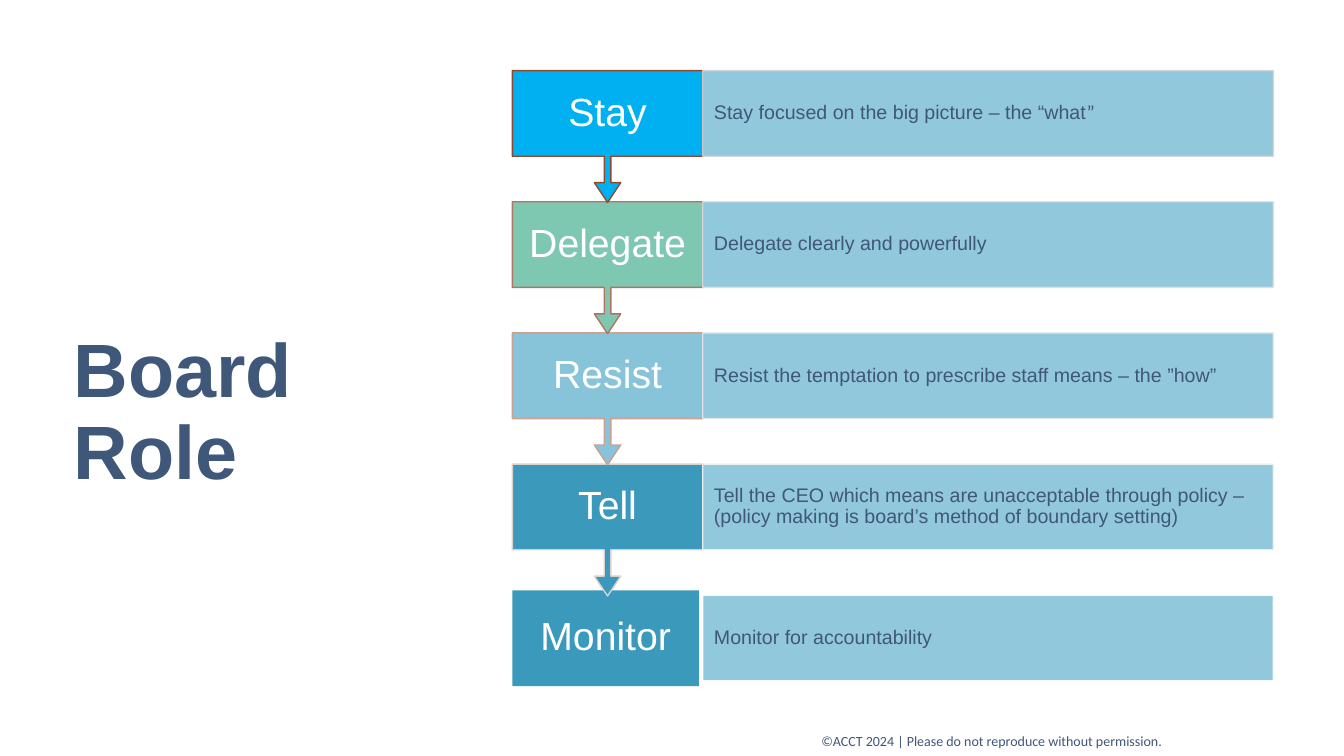
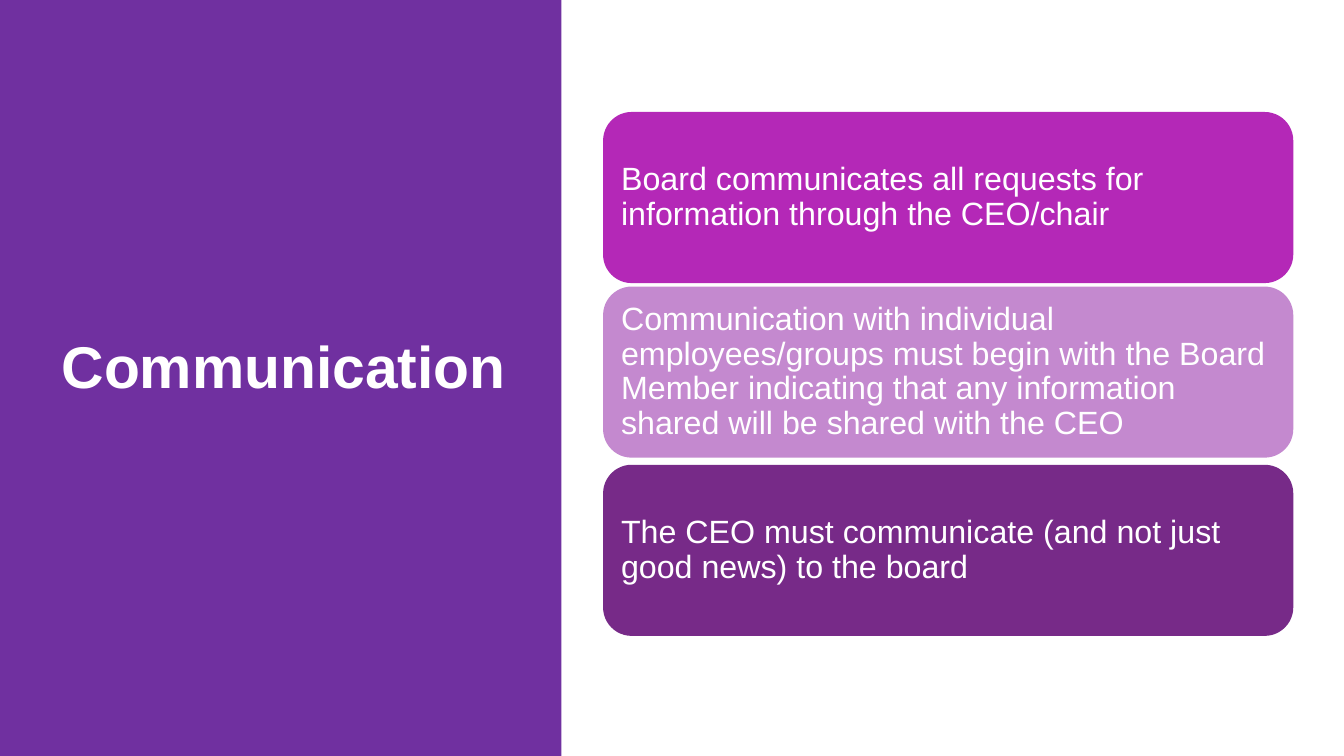
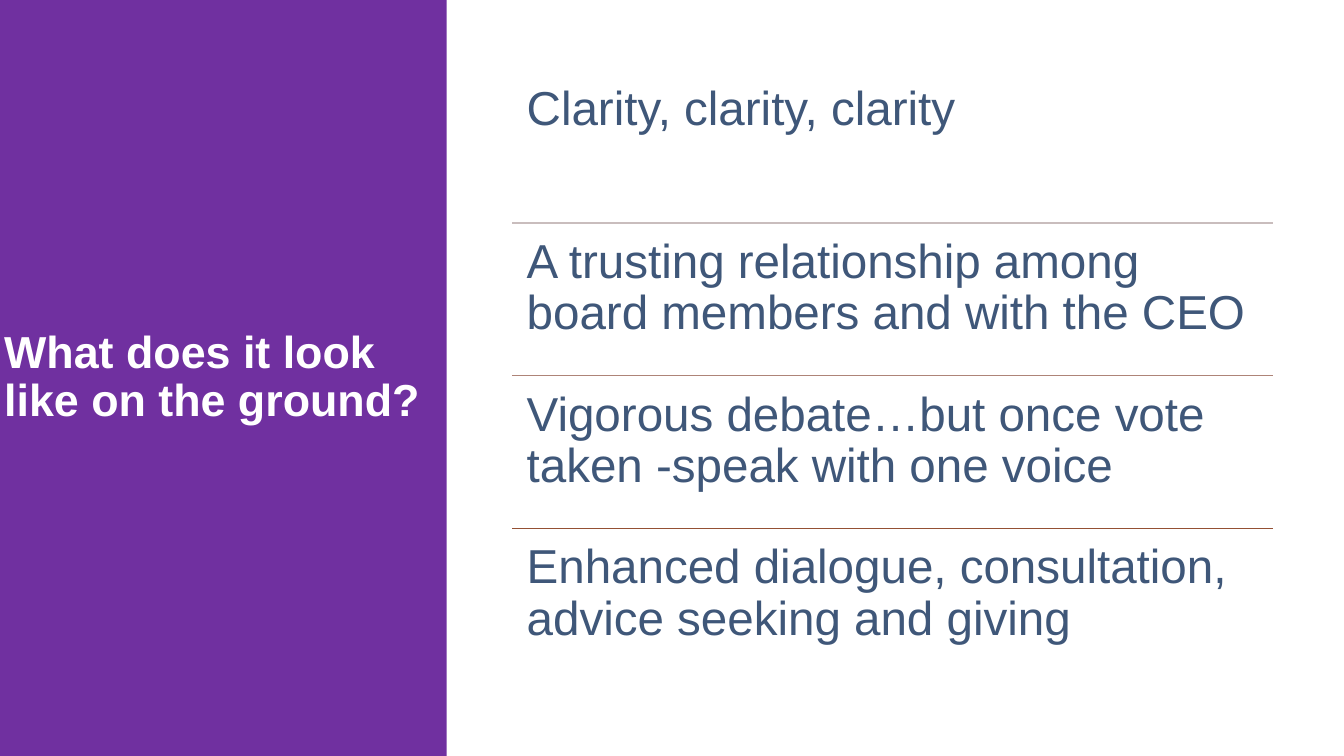
import dataclasses
import typing

import lxml.etree
import pptx
import pptx.dml.color
import pptx.enum.shapes
import pptx.enum.text
import pptx.oxml.ns
import pptx.shapes.autoshape
import pptx.slide
import pptx.text.text
import pptx.util

Pt = pptx.util.Pt
Kind = pptx.enum.shapes.MSO_SHAPE
Align = pptx.enum.text.PP_ALIGN
Anchor = pptx.enum.text.MSO_ANCHOR
qn = pptx.oxml.ns.qn


# Theme
@dataclasses.dataclass(frozen=True)
class Theme:
    font: str = "Arial"
    alt: str = "Calibri"
    ink: str = "3F5779"
    white: str = "FFFFFF"
    band: str = "7030A0"
    cell: str = "87C3D9"
    teal: str = "3B99BB"
    hero: float = 54
    head: float = 42
    sub: float = 32
    item: float = 34
    label: float = 28
    card: float = 23
    body: float = 14
    foot: float = 10


T = Theme()


class Box(typing.NamedTuple):
    left: float
    top: float
    width: float
    height: float

    def pts(self) -> list[pptx.util.Length]:
        return [Pt(side) for side in self]


class Run(typing.NamedTuple):
    text: str
    font: str = T.font


class Step(typing.NamedTuple):
    label: str
    fill: str
    line: str
    edge: str
    runs: list[Run]


class Card(typing.NamedTuple):
    top: float
    fill: str
    alpha: int
    text: str


class Item(typing.NamedTuple):
    text: str
    rule: str | None


# Shared drawing
def tint(color: str) -> pptx.dml.color.RGBColor:
    return pptx.dml.color.RGBColor.from_string(color)


def write(frame: pptx.text.text.TextFrame, runs: list[Run], size: float,
          color: str, inset: tuple[float, float, float, float],
          align: Align = Align.LEFT, anchor: Anchor = Anchor.MIDDLE,
          bold: bool = False, wrap: bool = True, space: float = 0.9) -> None:
    frame.auto_size = pptx.enum.text.MSO_AUTO_SIZE.NONE
    frame.word_wrap = wrap
    frame.vertical_anchor = anchor
    (frame.margin_left, frame.margin_top,
     frame.margin_right, frame.margin_bottom) = [Pt(side) for side in inset]
    para = frame.paragraphs[0]
    para.alignment = align
    para.line_spacing = space
    for part in runs:
        run = para.add_run()
        run.text = part.text
        run.font.name = part.font
        run.font.size = Pt(size)
        run.font.bold = bold
        run.font.color.rgb = tint(color)


def fade(shape: pptx.shapes.autoshape.Shape, alpha: int) -> None:
    for color in shape.element.spPr.iter(qn("a:srgbClr")):
        node = lxml.etree.SubElement(color, qn("a:alpha"))
        node.set("val", str(alpha * 1000))


def block(slide: pptx.slide.Slide, kind: Kind, box: Box, fill: str,
          line: str | None = None) -> pptx.shapes.autoshape.Shape:
    shape = slide.shapes.add_shape(kind, *box.pts())
    shape.shadow.inherit = False
    shape.fill.solid()
    shape.fill.fore_color.rgb = tint(fill)
    if line:
        shape.line.color.rgb = tint(line)
        shape.line.width = Pt(1)
    else:
        shape.line.fill.background()
    return shape


def title(slide: pptx.slide.Slide, text: str, box: Box, size: float,
          color: str, fill: str | None = None) -> None:
    shape = slide.shapes.title
    shape.left, shape.top, shape.width, shape.height = box.pts()
    if fill:
        shape.fill.solid()
        shape.fill.fore_color.rgb = tint(fill)
    write(shape.text_frame, [Run(text)], size, color, (3, 0, 0, 0), bold=True)


# Slide 1: chain of steps
STEPS = [
    Step("Stay", "00B0F0", "8E4A2E", "D3D3D3",
         [Run("Stay focused on the big picture – the “what"), Run("”", T.alt)]),
    Step("Delegate", "7EC7B1", "B07460", "DEDEDE",
         [Run("Delegate clearly and powerfully")]),
    Step("Resist", T.cell, "C9A096", "E9E9E9",
         [Run("Resist the temptation to prescribe staff means – the ”how”")]),
    Step("Tell", T.teal, "DDD0CD", "F4F4F4",
         [Run("Tell the CEO which means are unacceptable through policy – "
              "(policy making is board’s method of boundary setting)")]),
    Step("Monitor", T.teal, T.white, T.white,
         [Run("Monitor for accountability")]),
]


def roles(slide: pptx.slide.Slide) -> None:
    title(slide, "Board Role", Box(49.7, 50.4, 269.3, 490.3), T.hero, T.ink)
    left, top, pitch, wide, high = 366, 50.4, 93.7, 136, 61.2
    last = len(STEPS) - 1
    # Bottom up, so each arrow tip lies over the next step
    for row, step in reversed(list(enumerate(STEPS))):
        y = top + row * pitch
        if row == last:
            tag = block(slide, Kind.RECTANGLE,
                        Box(left, 421.7, 133.2, 68.4), step.fill)
        else:
            tag = block(slide, Kind.DOWN_ARROW_CALLOUT,
                        Box(left, y, wide, 94.2), step.fill, step.line)
            for spot, value in enumerate((0.05, 0.1, 0.15, 0.65)):
                tag.adjustments[spot] = value
        write(tag.text_frame, [Run(step.label)], T.label, T.white,
              (7.2, 3.6, 7.2, 3.6), Align.CENTER)
        cell = block(slide, Kind.RECTANGLE,
                     Box(left + wide, y, 407.6, high), T.cell, step.edge)
        fade(cell, 90)
        write(cell.text_frame, step.runs, T.body, T.ink, (8, 13.6, 8, 13.6))
    foot = slide.shapes.add_textbox(*Box(579.6, 519.8, 261.4, 19.4).pts())
    write(foot.text_frame,
          [Run("©ACCT 2024 | Please do not reproduce without permission.",
               T.alt)],
          T.foot, T.ink, (7.2, 3.6, 7.2, 3.6), anchor=Anchor.TOP,
          wrap=False, space=1.0)


# Slide 2: cards
CARDS = [
    Card(80, "B428B7", 100,
         "Board communicates all requests for information through the "
         "CEO/chair"),
    Card(204.7, "9B38AF", 59,
         "Communication with individual employees/groups must begin with the "
         "Board Member indicating that any information shared will be shared "
         "with the CEO"),
    Card(332, "772A88", 100,
         "The CEO must communicate (and not just good news) to the board"),
]


def talk(slide: pptx.slide.Slide) -> None:
    band = block(slide, Kind.RECTANGLE, Box(0, 0, 401, 540), T.band)
    # The band goes behind the title
    slide.shapes.title.element.addprevious(band.element)
    title(slide, "Communication", Box(41, 47, 333.4, 433.4), T.head, T.white)
    for card in CARDS:
        shape = block(slide, Kind.ROUNDED_RECTANGLE,
                      Box(430.8, card.top, 493, 122.2), card.fill)
        if card.alpha < 100:
            fade(shape, card.alpha)
        write(shape.text_frame, [Run(card.text)], T.card, T.white,
              (6.9, 6.9, 6.9, 6.9))


# Slide 3: ruled list
ITEMS = [
    Item("Clarity, clarity, clarity", None),
    Item("A trusting relationship among board members and with the CEO",
         "C9BDBD"),
    Item("Vigorous debate…but once vote taken -speak with one voice",
         "AE8478"),
    Item("Enhanced dialogue, consultation, advice seeking and giving",
         "945034"),
]


def ground(slide: pptx.slide.Slide) -> None:
    title(slide, "What does it look like on the ground?",
          Box(0, 0, 319, 540), T.sub, T.white, T.band)
    left, top, wide, pitch = 366, 50.4, 543.6, 109
    for row, item in enumerate(ITEMS):
        y = top + row * pitch
        if item.rule:
            rule = slide.shapes.add_connector(
                pptx.enum.shapes.MSO_CONNECTOR.STRAIGHT,
                Pt(left), Pt(y), Pt(left + wide), Pt(y))
            rule.line.color.rgb = tint(item.rule)
            rule.line.width = Pt(1)
            lxml.etree.SubElement(rule.element.spPr, qn("a:effectLst"))
        note = slide.shapes.add_textbox(*Box(left, y, wide, pitch).pts())
        write(note.text_frame, [Run(item.text)], T.item, T.ink,
              (10.2, 10.2, 10.2, 10.2), anchor=Anchor.TOP)


def main() -> None:
    deck = pptx.Presentation()
    deck.slide_width, deck.slide_height = Pt(960), Pt(540)
    plain = deck.slide_layouts.get_by_name("Title Only")
    for draw in (roles, talk, ground):
        draw(deck.slides.add_slide(plain))
    deck.save("out.pptx")


if __name__ == "__main__":
    main()
